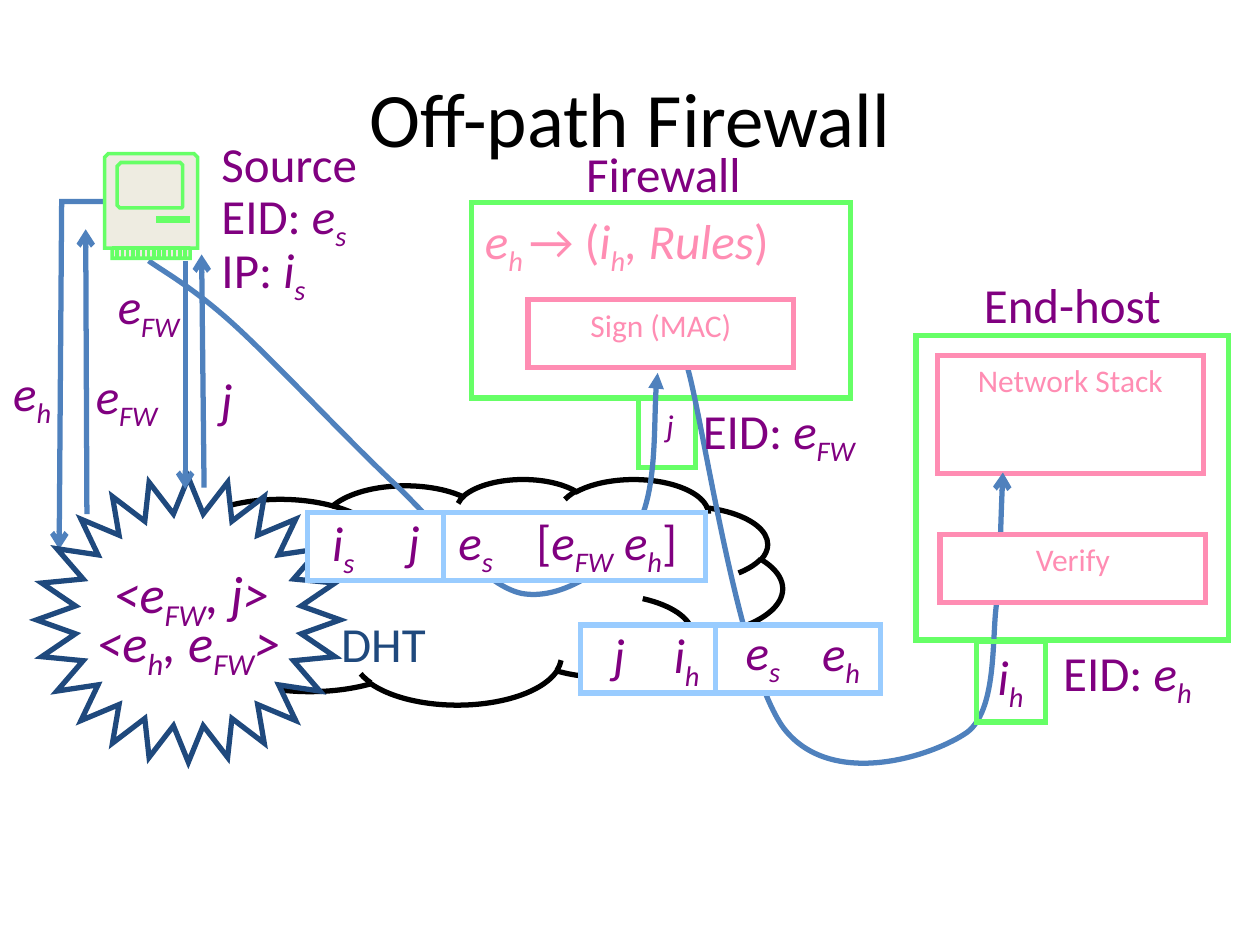
from dataclasses import dataclass
from typing import NamedTuple, Optional

from lxml import etree
from pptx import Presentation
from pptx.dml.color import RGBColor
from pptx.enum.shapes import MSO_CONNECTOR, MSO_SHAPE
from pptx.enum.text import MSO_ANCHOR, PP_ALIGN
from pptx.oxml.ns import qn
from pptx.util import Inches, Pt

RECTANGLE, CLOUD, STAR = MSO_SHAPE.RECTANGLE, MSO_SHAPE.CLOUD, MSO_SHAPE.STAR_24_POINT
STRAIGHT = MSO_CONNECTOR.STRAIGHT
LEFT, CENTER = PP_ALIGN.LEFT, PP_ALIGN.CENTER
TOP, MIDDLE = MSO_ANCHOR.TOP, MSO_ANCHOR.MIDDLE
COLUMNS = 100


@dataclass(frozen=True)
class Theme:
    font: str = "Calibri"
    black: str = "000000"
    white: str = "FFFFFF"
    purple: str = "800080"
    pink: str = "FF8DB3"
    green: str = "66FF66"
    sky: str = "99CCFF"
    blue: str = "4F81BD"
    navy: str = "1F497D"
    cream: str = "EEECE1"
    title: int = 44
    table: int = 30
    label: int = 28
    small: int = 18
    stroke: int = 3
    thin: int = 2


THEME = Theme()


class Frame(NamedTuple):
    column: float
    row: float
    columns: float
    rows: float


class Span(NamedTuple):
    text: str
    italic: bool = False
    lowered: bool = False


@dataclass(frozen=True)
class Label:
    frame: Frame
    paragraphs: list
    size: int = THEME.label
    color: str = THEME.purple
    align: PP_ALIGN = CENTER
    spacing: float = 1.0


@dataclass(frozen=True)
class Outline:
    frame: Frame
    line: str
    fill: Optional[str] = None
    kind: MSO_SHAPE = RECTANGLE
    caption: str = ""


@dataclass(frozen=True)
class Route:
    points: list
    head: str = ""
    curved: bool = False


def symbol(name: str, index: str = "") -> list:
    spans = [Span(name, True)]
    return spans + [Span(index, True, True)] if index else spans


deck = Presentation()
deck.slide_width, deck.slide_height = Inches(10), Inches(7.5)
CELL = deck.slide_width / COLUMNS
page = deck.slides.add_slide(deck.slide_layouts[5])


def cells(*lengths: float) -> list:
    return [round(length * CELL) for length in lengths]


def style(line, color: str, width: float, head: str = "") -> None:
    line.color.rgb = RGBColor.from_string(color)
    line.width = Pt(width)
    stroke = line._get_or_add_ln()
    etree.SubElement(stroke, qn("a:miter"), lim="800000")
    if head:
        etree.SubElement(stroke, qn("a:tailEnd"), type=head)


def paint(shape, fill: Optional[str]) -> None:
    shape.shadow.inherit = False
    if fill:
        shape.fill.solid()
        shape.fill.fore_color.rgb = RGBColor.from_string(fill)
    else:
        shape.fill.background()


def write(frame, label: Label, anchor: MSO_ANCHOR = TOP) -> None:
    frame.word_wrap = True
    frame.vertical_anchor = anchor
    for number, spans in enumerate(label.paragraphs):
        para = frame.add_paragraph() if number else frame.paragraphs[0]
        para.alignment = label.align
        para.line_spacing = label.spacing
        for span in spans:
            run = para.add_run()
            run.text = span.text
            run.font.name, run.font.size = THEME.font, Pt(label.size)
            run.font.italic = span.italic
            run.font.color.rgb = RGBColor.from_string(label.color)
            if span.lowered:
                run._r.get_or_add_rPr().set("baseline", "-25000")


def draw_label(label: Label) -> None:
    write(page.shapes.add_textbox(*cells(*label.frame)).text_frame, label)


def draw_outline(outline: Outline) -> None:
    shape = page.shapes.add_shape(outline.kind, *cells(*outline.frame))
    paint(shape, outline.fill)
    style(shape.line, outline.line, THEME.stroke)
    if outline.caption:
        caption = [[Span(outline.caption)]]
        write(shape.text_frame, Label(outline.frame, caption, THEME.small, outline.line))


def draw_line(start: tuple, end: tuple, color: str, head: str = "") -> None:
    line = page.shapes.add_connector(STRAIGHT, *cells(*start, *end))
    style(line.line, color, THEME.stroke, head)
    etree.SubElement(line._element.spPr, qn("a:effectLst"))


def trace(contours: list, close: bool):
    builder = page.shapes.build_freeform(*cells(*contours[0][0]))
    for number, points in enumerate(contours):
        if number:
            builder.move_to(*cells(*points[0]))
        builder.add_line_segments([cells(*point) for point in points[1:]], close=close)
    return builder.convert_to_shape()


def draw_route(route: Route) -> None:
    shape = trace([route.points], False)
    paint(shape, None)
    style(shape.line, THEME.blue, THEME.stroke, route.head)
    if route.curved:
        segments = list(shape._element.iter(qn("a:lnTo")))
        for first in range(0, len(segments), 3):
            curve = segments[first]
            curve.tag = qn("a:cubicBezTo")
            for segment in segments[first + 1:first + 3]:
                curve.append(segment[0])
                segment.getparent().remove(segment)


def draw_header(frame: Frame, divider: float) -> None:
    draw_outline(Outline(frame, THEME.sky, THEME.white))
    draw_line((divider, frame.row), (divider, frame.row + frame.rows), THEME.sky)


def box_points(left: float, top: float, right: float, bottom: float) -> list:
    return [(left, top), (right, top), (right, bottom), (left, bottom)]


def draw_computer() -> None:
    body = [(8.9, 20.5), (15.1, 20.5), (15.1, 19.7), (15.7, 19.7), (15.7, 12.5), (15.4, 12.2),
            (8.6, 12.2), (8.3, 12.5), (8.3, 19.7), (8.9, 19.7)]
    screen = [(9.6, 12.9), (14.3, 12.9), (14.5, 13.1), (14.5, 16.4), (14.4, 16.5),
              (9.5, 16.5), (9.3, 16.3), (9.3, 13.2)]
    slot = box_points(12.5, 17.3, 14.9, 17.6)
    ribs = [[(9.3 + 0.415 * rib, 19.7), (9.3 + 0.415 * rib, 20.5)] for rib in range(14)]
    for contours in ([body], [screen, slot, [(8.9, 19.7), (15.1, 19.7)], *ribs]):
        shape = trace(contours, True)
        paint(shape, THEME.cream)
        style(shape.line, THEME.green, THEME.thin)


title = page.shapes.title
title.left, title.top, title.width, title.height = cells(5, 3, 90, 12.5)
write(title.text_frame, Label(Frame(5, 3, 90, 12.5), [[Span("Off-path Firewall")]],
                              THEME.title, THEME.black), MIDDLE)

SOURCE_TO_FIREWALL = Route(
    [(11.8, 20.7), (12.9, 21.5), (15.3, 22.8), (18.5, 25.7), (21.7, 28.6), (27.2, 34.5),
     (31, 38.1), (34.8, 41.6), (38.2, 46.4), (41.4, 47.1), (44.6, 47.7), (48.6, 45),
     (50.4, 42.1), (52.2, 39.2), (51.8, 32.2), (52.2, 29.6)], "triangle", True)
FIREWALL_TO_HOST = Route(
    [(54.6, 29.3), (55.9, 34), (58.6, 52.9), (62.2, 57.8), (65.9, 62.6), (73.7, 60.1),
     (76.5, 58.3), (79.4, 56.6), (78.6, 49.7), (79.2, 47.4)], "", True)
HOST_TO_STACK = Route([(79.3, 47.4), (79.3, 45.7), (79.5, 39.5), (79.6, 37.5)], "arrow", True)

draw_route(Route([(8.3, 16), (4.9, 16), (4.7, 43.6)], "arrow"))
draw_line((6.9, 40.8), (6.8, 18.2), THEME.blue, "arrow")
for outline in (
    Outline(Frame(37.4, 16.1, 30.1, 15.5), THEME.green),
    Outline(Frame(72.7, 26.6, 24.8, 24.2), THEME.green),
    Outline(Frame(74.4, 28.2, 21.1, 9.4), THEME.pink, caption="Network Stack"),
    Outline(Frame(9.3, 38, 52.8, 17.9), THEME.black, kind=CLOUD),
    Outline(Frame(50.7, 31.6, 4.5, 5.5), THEME.green, THEME.white),
):
    draw_outline(outline)
draw_route(SOURCE_TO_FIREWALL)
draw_outline(Outline(Frame(2.9, 37.9, 24.1, 22.6), THEME.navy, THEME.white, STAR))
draw_route(FIREWALL_TO_HOST)
draw_header(Frame(24.4, 40.7, 31.6, 5.4), 35.2)
draw_header(Frame(46.1, 49.6, 23.8, 5.4), 56.8)
draw_line((16.2, 38.7), (16, 20.2), THEME.blue, "arrow")
draw_line((14.7, 20.7), (14.7, 38.8), THEME.blue, "arrow")
draw_computer()
draw_outline(Outline(Frame(77.5, 50.9, 5.5, 6.4), THEME.green))
draw_outline(Outline(Frame(41.9, 23.8, 21.1, 5.4), THEME.pink, THEME.white, caption="Sign (MAC)"))
draw_route(HOST_TO_STACK)
draw_outline(Outline(Frame(74.6, 42.4, 21.1, 5.4), THEME.pink, THEME.white, caption="Verify"))

EID = Span("EID: ")
RULE = [*symbol("e", "h "), Span("→ ("), *symbol("i", "h"), Span(", Rules", True), Span(")")]
ROUTE_LIST = [Span("["), *symbol("e", "FW"), *symbol(" e", "h"), Span("]")]
SOURCE = [[Span("Source")], [EID, *symbol("e", "s")], [Span("IP: "), *symbol("i", "s")]]
HOST_ENTRY = [*symbol("<e", "h"), *symbol(", e", "FW"), Span(">", True)]
FIREWALL_ENTRY = [*symbol("<e", "FW"), Span(", j>", True)]

for label in (
    Label(Frame(37.5, 16.3, 31.9, 5.2), [RULE], color=THEME.pink, align=LEFT, spacing=0.9),
    Label(Frame(24.9, 40.2, 4.7, 5.7), [symbol("i", "s")]),
    Label(Frame(30.5, 40.1, 4.7, 5.7), [symbol("j")]),
    Label(Frame(34.6, 40.1, 6.3, 5.7), [symbol("e", "s")]),
    Label(Frame(40.2, 40.1, 15.9, 5.7), [ROUTE_LIST]),
    Label(Frame(51.7, 49.1, 5.6, 5.7), [symbol("i", "h")]),
    Label(Frame(46.8, 49.1, 4.7, 5.7), [symbol("j")]),
    Label(Frame(57.2, 48.8, 6.7, 5.7), [symbol("e", "s")]),
    Label(Frame(63.4, 48.9, 6.7, 5.7), [symbol("e", "h")]),
    Label(Frame(-0.8, 28.3, 6.7, 5.7), [symbol("e", "h")]),
    Label(Frame(4.9, 47.9, 20.1, 6), [HOST_ENTRY], THEME.table),
    Label(Frame(6.2, 44, 18, 6), [FIREWALL_ENTRY], THEME.table),
    Label(Frame(5.9, 28.5, 8.3, 5.7), [symbol("e", "FW")]),
    Label(Frame(7.5, 21.4, 8.6, 5.7), [symbol("e", "FW")]),
    Label(Frame(15.8, 28.8, 4.4, 5.7), [symbol("j")]),
    Label(Frame(26.1, 48.2, 11.4, 5.7), [[Span("DHT")]], color=THEME.navy, align=LEFT),
    Label(Frame(16.6, 11, 24, 12.2), SOURCE, align=LEFT, spacing=0.8),
    Label(Frame(37.8, 10.9, 29.7, 5.7), [[Span("Firewall")]]),
    Label(Frame(72.7, 21.3, 24.8, 5.7), [[Span("End-host")]]),
    Label(Frame(78.2, 50.8, 5.4, 5.7), [symbol("i", "h")], align=LEFT),
    Label(Frame(51.9, 31.7, 3.8, 5), [symbol("j")], THEME.small, align=LEFT),
    Label(Frame(54.8, 31.3, 18.4, 5.7), [[EID, *symbol("e", "FW")]], align=LEFT),
    Label(Frame(83.4, 50.5, 24, 5.7), [[EID, *symbol("e", "h")]], align=LEFT),
):
    draw_label(label)

deck.save("out.pptx")
